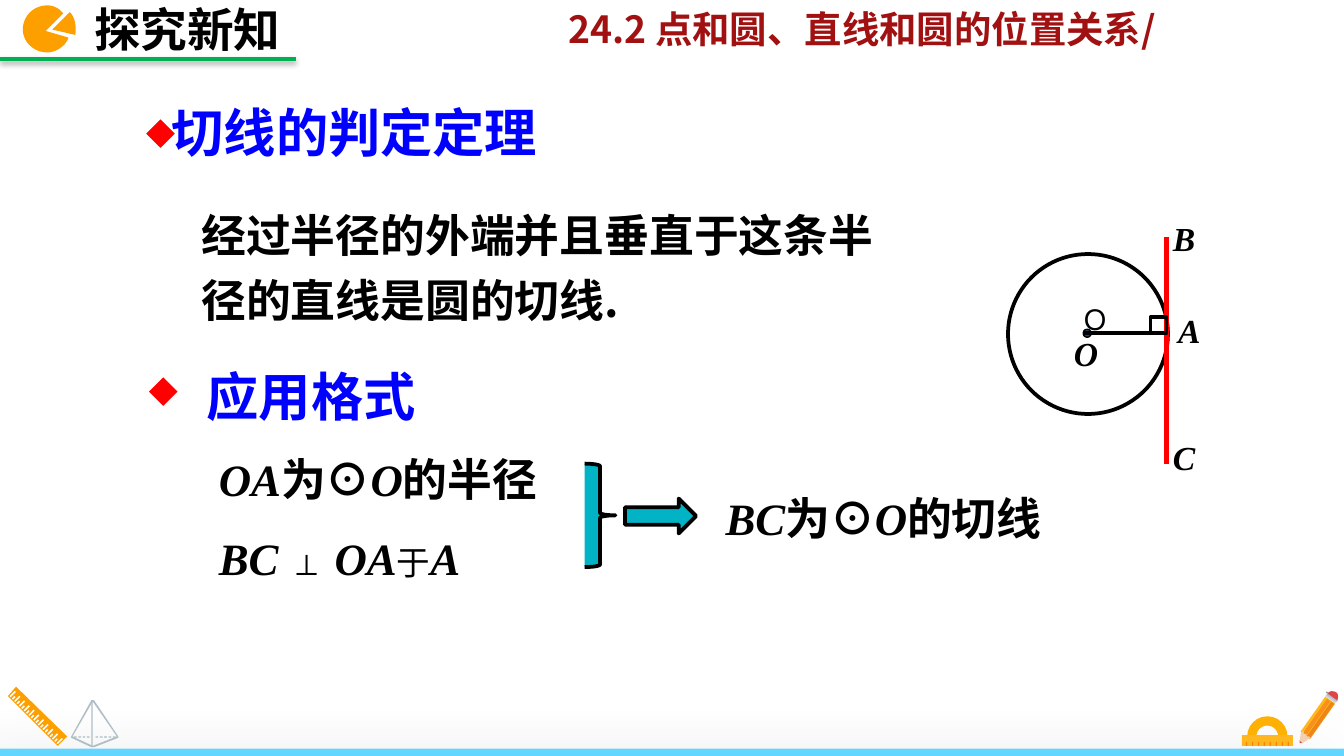
"""Build the slide on the tangent theorem of a circle."""
from dataclasses import dataclass

from lxml import etree
from pptx import Presentation
from pptx.dml.color import RGBColor
from pptx.enum.shapes import MSO_CONNECTOR, MSO_SHAPE
from pptx.enum.text import MSO_ANCHOR, MSO_AUTO_SIZE, PP_ALIGN
from pptx.oxml.ns import qn
from pptx.util import Inches, Pt

RECT, OVAL, DIAMOND = MSO_SHAPE.RECTANGLE, MSO_SHAPE.OVAL, MSO_SHAPE.DIAMOND
BLOCK_ARC, BRACE, ARROW = MSO_SHAPE.BLOCK_ARC, MSO_SHAPE.RIGHT_BRACE, MSO_SHAPE.RIGHT_ARROW
STRAIGHT = MSO_CONNECTOR.STRAIGHT
LEFT, CENTER, TOP = PP_ALIGN.LEFT, PP_ALIGN.CENTER, MSO_ANCHOR.TOP
FIT = MSO_AUTO_SIZE.SHAPE_TO_FIT_TEXT
SANS, SERIF = "Noto Sans CJK SC", "Times New Roman"
COLORS = {
    "black": "000000", "white": "FFFFFF", "red": "FF0000", "blue": "0000FF",
    "maroon": "A11111", "green": "00B050", "lime": "00FF00", "teal": "02B3C5",
    "navy": "1F497D", "sky": "63D6FF", "orange": "FE9F00", "amber": "FFB720",
    "arch": "FFB103", "tick": "FB8501", "slate": "B0BEC5", "shade": "ED8518",
    "light": "F89019", "lead": "E74C3C", "rubber": "E24348", "wood": "F4CFB2",
    "band1": "D1D3D4", "band2": "BCBEC0", "band3": "939598",
}


@dataclass
class Run:
    text: str
    size: float = 24
    font: str = SERIF
    color: str = "black"
    bold: bool = True
    italic: bool = False


@dataclass
class Shadow:
    alpha: int
    blur: float
    distance: float
    angle: int


def rgb(color: str) -> RGBColor:
    return RGBColor.from_string(COLORS[color])


def set_shadow(shape, shadow: Shadow | None = None) -> None:
    for old in shape._element.spPr.findall(qn("a:effectLst")):
        shape._element.spPr.remove(old)
    effects = etree.SubElement(shape._element.spPr, qn("a:effectLst"))
    if shadow:
        outer = etree.SubElement(effects, qn("a:outerShdw"), blurRad=str(Pt(shadow.blur)),
                                 dist=str(Pt(shadow.distance)), dir=str(shadow.angle * 60000),
                                 algn="t", rotWithShape="0")
        tone = etree.SubElement(outer, qn("a:srgbClr"), val=COLORS["black"])
        etree.SubElement(tone, qn("a:alpha"), val=str(shadow.alpha * 1000))


def paint(shape, fill: str | None, line: str | None = None, width: float = 2,
          shadow: Shadow | None = None) -> None:
    if fill:
        shape.fill.solid()
        shape.fill.fore_color.rgb = rgb(fill)
    else:
        shape.fill.background()
    if line:
        shape.line.color.rgb = rgb(line)
        shape.line.width = Pt(width)
    else:
        shape.line.fill.background()
    set_shadow(shape, shadow)


def add_preset(shapes, kind, box: tuple, fill: str | None, line: str | None = None,
               width: float = 2, rotation: float = 0, shadow: Shadow | None = None):
    shape = shapes.add_shape(kind, *(Inches(v) for v in box))
    shape.rotation = rotation
    paint(shape, fill, line, width, shadow)
    return shape


def flatten(contour: list[tuple], steps: int = 10) -> list[tuple]:
    """Turn points and cubic curve segments into plain points."""
    points = [contour[0]]
    for segment in contour[1:]:
        if len(segment) == 2:
            points.append(segment)
            continue
        start, (ax, ay, bx, by, cx, cy) = points[-1], segment
        for t in (i / steps for i in range(1, steps + 1)):
            weights = ((1 - t) ** 3, 3 * t * (1 - t) ** 2, 3 * t * t * (1 - t), t ** 3)
            points.append(tuple(sum(w * v for w, v in zip(weights, axis))
                                for axis in ((start[0], ax, bx, cx), (start[1], ay, by, cy))))
    return points


def add_outline(shapes, contours: list[list[tuple]], fill: str) -> None:
    paths = [[(Inches(x), Inches(y)) for x, y in flatten(contour)] for contour in contours]
    builder = shapes.build_freeform(*paths[0][0], scale=1.0)
    for index, points in enumerate(paths):
        if index:
            builder.move_to(*points[0])
        builder.add_line_segments(points[1:], close=True)
    paint(builder.convert_to_shape(), fill)


def add_line(shapes, start: tuple, end: tuple, color: str, width: float,
             shadow: Shadow | None = None) -> None:
    line = shapes.add_connector(STRAIGHT, *(Inches(v) for v in (*start, *end)))
    line.line.color.rgb = rgb(color)
    line.line.width = Pt(width)
    set_shadow(line, shadow)


def write(shape, runs: list[Run], align=LEFT, spacing: float = 1, wrap: bool = True) -> None:
    frame = shape.text_frame
    frame.word_wrap, frame.auto_size, frame.vertical_anchor = wrap, FIT, TOP
    paragraph = frame.paragraphs[0]
    paragraph.alignment, paragraph.line_spacing = align, spacing
    for part in runs:
        run = paragraph.add_run()
        run.text = part.text
        font = run.font
        font.size, font.name = Pt(part.size), part.font
        font.bold, font.italic = part.bold, part.italic
        font.color.rgb = rgb(part.color)
        etree.SubElement(run._r.get_or_add_rPr(), qn("a:ea"), typeface=SANS)


def add_text(shapes, box: tuple, runs: list[Run], align=LEFT, spacing: float = 1,
             wrap: bool = True) -> None:
    write(shapes.add_textbox(*(Inches(v) for v in box)), runs, align, spacing, wrap)


def draw_protractor(shapes) -> None:
    arch = add_preset(shapes, BLOCK_ARC, (9.28, 5.33, 0.3, 0.3), "arch")
    arch.adjustments[2] = 0.23
    add_preset(shapes, RECT, (9.24, 5.47, 0.38, 0.08), "amber")
    for i in range(8):
        add_preset(shapes, RECT, (9.27 + 0.31 * i / 7, 5.52, 0.01, 0.03), "tick")


def draw_pencil(shapes) -> None:
    for box, fill in (((9.76, 5.18, 0.09, 0.32), "amber"), ((9.81, 5.2, 0.03, 0.32), "shade"),
                      ((9.78, 5.18, 0.03, 0.32), "light"), ((9.86, 5.18, 0.09, 0.03), "band1"),
                      ((9.87, 5.18, 0.09, 0.02), "band2"), ((9.86, 5.17, 0.09, 0.01), "band3")):
        add_preset(shapes, RECT, box, fill, rotation=35.2)
    add_outline(shapes, [[(9.94, 5.15), (9.92, 5.14, 9.89, 5.14, 9.88, 5.16), (9.95, 5.21),
                          (9.96, 5.19, 9.96, 5.16, 9.94, 5.15)]], "rubber")
    add_outline(shapes, [[(9.67, 5.51), (9.69, 5.53), (9.75, 5.49), (9.74, 5.48), (9.72, 5.48),
                          (9.72, 5.46), (9.7, 5.46), (9.7, 5.44), (9.68, 5.45)]], "wood")
    add_outline(shapes, [[(9.67, 5.51), (9.67, 5.53), (9.69, 5.53), (9.68, 5.52)]], "lead")


def draw_ruler(shapes) -> None:
    contours = [[(0.12, 5.11), (0.06, 5.18), (0.43, 5.55), (0.5, 5.48)]]
    for i in range(21):
        x, y = 0.07 + 0.35 * i / 20, 5.18 + 0.35 * i / 20
        reach = 0.02 if i % 2 else 0.04
        contours.append([(x, y), (x + reach, y - reach),
                         (x + reach + 0.01, y - reach + 0.01), (x + 0.01, y + 0.01)])
    add_outline(shapes, contours, "orange")


def draw_pyramid(shapes) -> None:
    for i in (0, 1, 2, 3, 5, 6, 7, 8, 9):
        add_preset(shapes, RECT, (0.55 + 0.29 * i / 9, 5.48, 0.02, 0.01), "slate")
    add_outline(shapes, [[(0.68, 5.21), (0.53, 5.48), (0.53, 5.49), (0.68, 5.56), (0.7, 5.56),
                          (0.88, 5.49), (0.88, 5.48), (0.7, 5.21)],
                         [(0.87, 5.48), (0.69, 5.55), (0.54, 5.48), (0.69, 5.22)]], "slate")
    add_preset(shapes, RECT, (0.68, 5.21, 0.01, 0.35), "slate")


def draw_tangent_figure(shapes) -> None:
    add_preset(shapes, OVAL, (7.5, 1.89, 1.19, 1.19), None, "black")
    add_preset(shapes, OVAL, (8.06, 2.45, 0.06, 0.06), "navy", "black", 0.75)
    add_line(shapes, (8.06, 2.48), (8.68, 2.48), "black", 2)
    add_line(shapes, (8.68, 1.76), (8.68, 3.45), "red", 2.25)
    add_preset(shapes, RECT, (8.56, 2.36, 0.12, 0.12), None, "black")
    add_text(shapes, (7.95, 2.2, 0.29, 0.35), [Run("Ｏ", 15, bold=False)], CENTER, wrap=False)
    for name, box in (("A", (8.57, 2.26, 0.56, 0.4)), ("B", (8.56, 1.57, 0.5, 0.4)),
                      ("C", (8.5, 3.2, 0.62, 0.4)), ("O", (7.89, 2.43, 0.38, 0.4))):
        add_text(shapes, box, [Run(name, 18, italic=True)], CENTER)


def main() -> None:
    deck = Presentation()
    deck.slide_width, deck.slide_height = Inches(10), Inches(10 * 9 / 16)
    slide = deck.slides.add_slide(deck.slide_layouts[5])
    shapes = slide.shapes
    title = shapes.title
    title.left, title.top, title.width, title.height = (Inches(v) for v in (0.6, -0.04, 1.61, 0.52))
    write(title, [Run("探究新知", 25, SANS)], wrap=False)

    add_preset(shapes, RECT, (0, 5.57, 10, 0.06), "sky", shadow=Shadow(50, 35, 20, 135))
    for draw in (draw_protractor, draw_pencil, draw_ruler, draw_pyramid):
        draw(shapes)
    add_text(shapes, (4.13, 0, 4.72, 0.44),
             [Run("24.2 点和圆、直线和圆的位置关系/", 20, SANS, "maroon")], wrap=False)
    add_outline(shapes, [
        [(0.47, 0.1), (0.44, 0.06, 0.4, 0.04, 0.35, 0.04), (0.25, 0.04, 0.17, 0.12, 0.17, 0.22),
         (0.17, 0.31, 0.25, 0.39, 0.35, 0.39), (0.42, 0.39, 0.49, 0.34, 0.51, 0.28), (0.34, 0.23)],
        [(0.52, 0.09), (0.39, 0.22), (0.56, 0.26), (0.57, 0.2, 0.56, 0.13, 0.52, 0.09)]], "orange")
    add_line(shapes, (0, 0.44), (2.2, 0.44), "green", 2, Shadow(38, 3.1, 1.6, 90))

    theorem = add_preset(shapes, RECT, (1.4, 1.42, 5.37, 1.07), "white", "white")
    write(theorem, [Run("经过半径的外端并且垂直于这条半径的直线是圆的切线.", font=SANS)], spacing=1.2)
    for heading, box, marker in (("切线的判定定理", (1.18, 0.7, 3.16, 0.57), (1.08, 0.88)),
                                 ("应用格式", (1.44, 2.66, 1.78, 0.57), (1.1, 2.8))):
        add_text(shapes, box, [Run(heading, 28, SANS, "blue")], wrap=False)
        add_preset(shapes, DIAMOND, (*marker, 0.23, 0.23), "red", "white", 0.75)

    for segment, ending, box in (("OA", "的半径", (1.53, 3.23, 4.46, 0.59)),
                                 ("BC", "的切线", (5.3, 3.52, 3.81, 0.59))):
        add_text(shapes, box, [Run(segment, italic=True), Run("为⊙"),
                               Run("O", italic=True), Run(ending)], spacing=1.2)
    add_text(shapes, (1.53, 3.82, 2.31, 0.54),
             [Run("BC ", italic=True), Run("⊥", 18), Run(" ", color="lime"),
              Run("OA", italic=True), Run("于", 18, bold=False), Run("A", italic=True)], spacing=1.2)
    add_preset(shapes, BRACE, (4.35, 3.45, 0.23, 0.77), "teal", "black")
    add_preset(shapes, ARROW, (4.65, 3.71, 0.53, 0.26), "teal", "black")
    draw_tangent_figure(shapes)
    deck.save("out.pptx")


if __name__ == "__main__":
    main()
